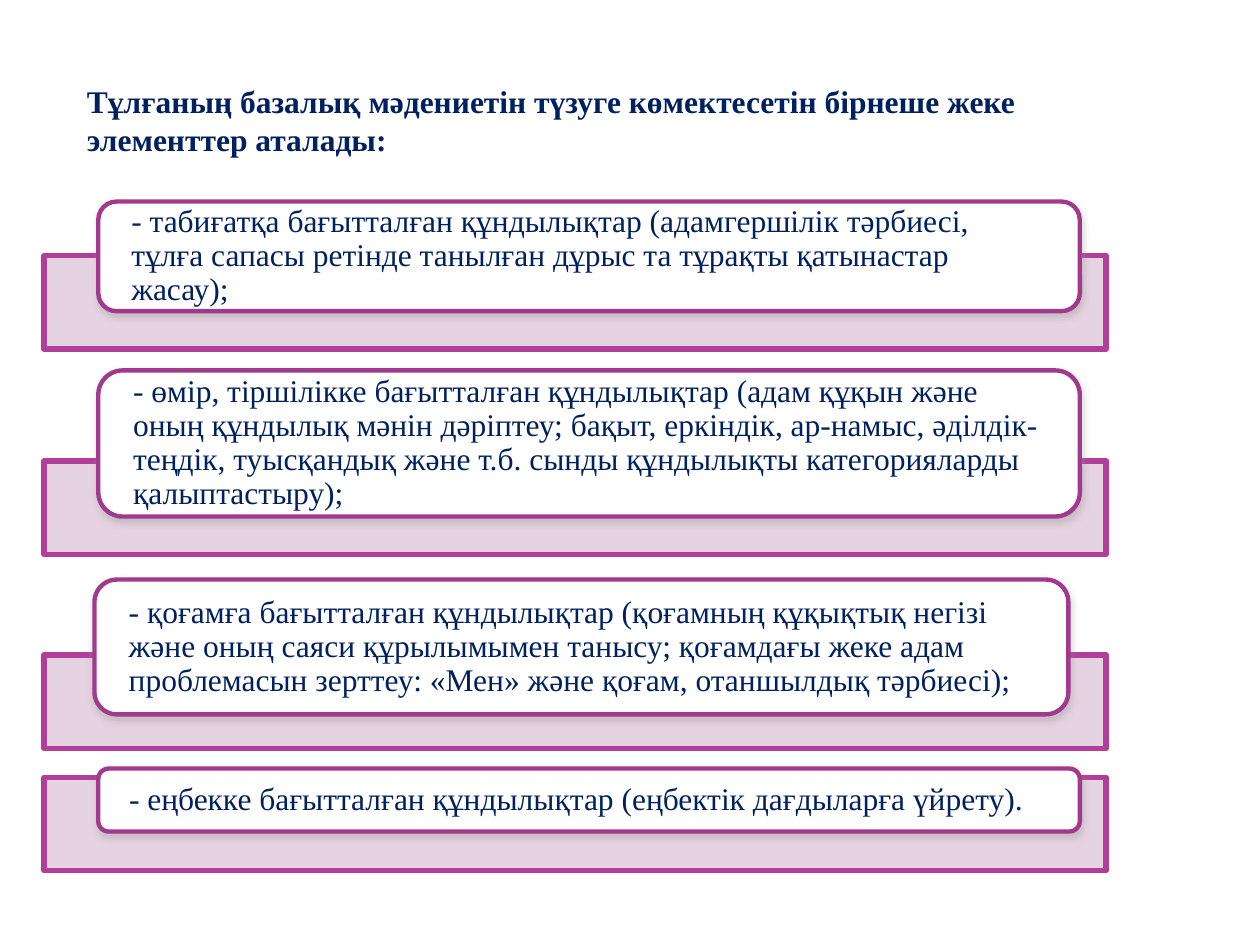
from lxml.etree import SubElement as Sub
from pptx import Presentation
from pptx.dml.color import RGBColor
from pptx.enum.shapes import MSO_SHAPE as Kind
from pptx.enum.text import MSO_ANCHOR as Anchor, MSO_AUTO_SIZE as Auto, PP_ALIGN as Align
from pptx.oxml.ns import qn
from pptx.util import Inches, Pt

TITLE = "Тұлғаның базалық мәдениетін түзуге көмектесетін бірнеше жеке элементтер аталады:"
ROWS = [
    ("- табиғатқа бағытталған құндылықтар (адамгершілік тəрбиесі, тұлға сапасы ретінде танылған дұрыс та тұрақты қатынастар жасау);",
     20.3, (7.8, 16, 77.9, 8.7)),
    ("- өмір, тіршілікке бағытталған құндылықтар (адам құқын жəне оның құндылық мəнін дəріптеу; бақыт, еркіндік, ар-намыс, əділдік-теңдік, туысқандық жəне т.б. сынды құндылықты категорияларды қалыптастыру);",
     36.6, (7.8, 29.4, 77.9, 11.6)),
    ("- қоғамға бағытталған құндылықтар (қоғамның құқықтық негізі жəне оның саяси құрылымымен танысу; қоғамдағы жеке адам проблемасын зерттеу: «Мен» жəне қоғам, отаншылдық тəрбиесі);",
     52, (7.5, 46, 77.3, 10.7)),
    ("- еңбекке бағытталған құндылықтар (еңбектік дағдыларға үйрету).",
     61.7, (7.8, 61, 77.9, 5)),
]
COLS = 100
FONT = {"name": "Times New Roman", "size": Pt(18)}
INK = "002060"
FRAME = {"word_wrap": True, "auto_size": Auto.NONE}
HEAD = {**FRAME, "vertical_anchor": Anchor.TOP}
CARD = {**FRAME, "vertical_anchor": Anchor.MIDDLE, "margin_left": Inches(0.22),
        "margin_right": Inches(0.22), "margin_top": 0, "margin_bottom": 0}


def paint(color, code):
    color.rgb = RGBColor.from_string(code)


def style(item, look):
    for key, val in look.items():
        setattr(item, key, val)


def place(cells):
    return [round(c * deck.slide_width / COLS) for c in cells]


def write(shape, text, look, bold, gap):
    frame = shape.text_frame
    style(frame, look)
    frame.text = text
    para = frame.paragraphs[0]
    style(para, {"alignment": Align.LEFT, "line_spacing": gap, "space_before": Pt(0)})
    font = para.runs[0].font
    style(font, {**FONT, "bold": bold})
    paint(font.color, INK)


def block(kind, cells, fill, line, width):
    shape = slide.shapes.add_shape(kind, *place(cells))
    shape.shadow.inherit = False
    shape.fill.solid()
    paint(shape.fill.fore_color, fill)
    paint(shape.line.color, line)
    shape.line.width = Pt(width)
    return shape


def fade(node, share):
    Sub(node, qn("a:alpha"), val=str(share * 1000))


def shade(shape):
    glow = Sub(shape._element.spPr.find(qn("a:effectLst")), qn("a:outerShdw"),
               blurRad=str(Pt(4)), dist=str(Pt(2)), dir="5400000", rotWithShape="0")
    fade(Sub(glow, qn("a:srgbClr"), val="979797"), 38)


deck = Presentation()
deck.slide_width, deck.slide_height = Inches(10), Inches(7.5)
slide = deck.slides.add_slide(deck.slide_layouts[5])

title = slide.shapes.title
style(title, dict(zip(("left", "top", "width", "height"), place((5.9, 6, 80.3, 7.1)))))
write(title, TITLE, HEAD, True, 1)

for text, top, cells in ROWS:
    band = block(Kind.RECTANGLE, (3.5, top, 84.3, 7.4), "E4CFDE", "B13F9A", 3.15)
    fade(band._element.spPr.find(qn("a:solidFill"))[0], 90)
    card = block(Kind.ROUNDED_RECTANGLE, cells, "FFFFFF", "A1398C", 2.5)
    shade(card)
    write(card, text, CARD, False, 0.9)

deck.save("out.pptx")
